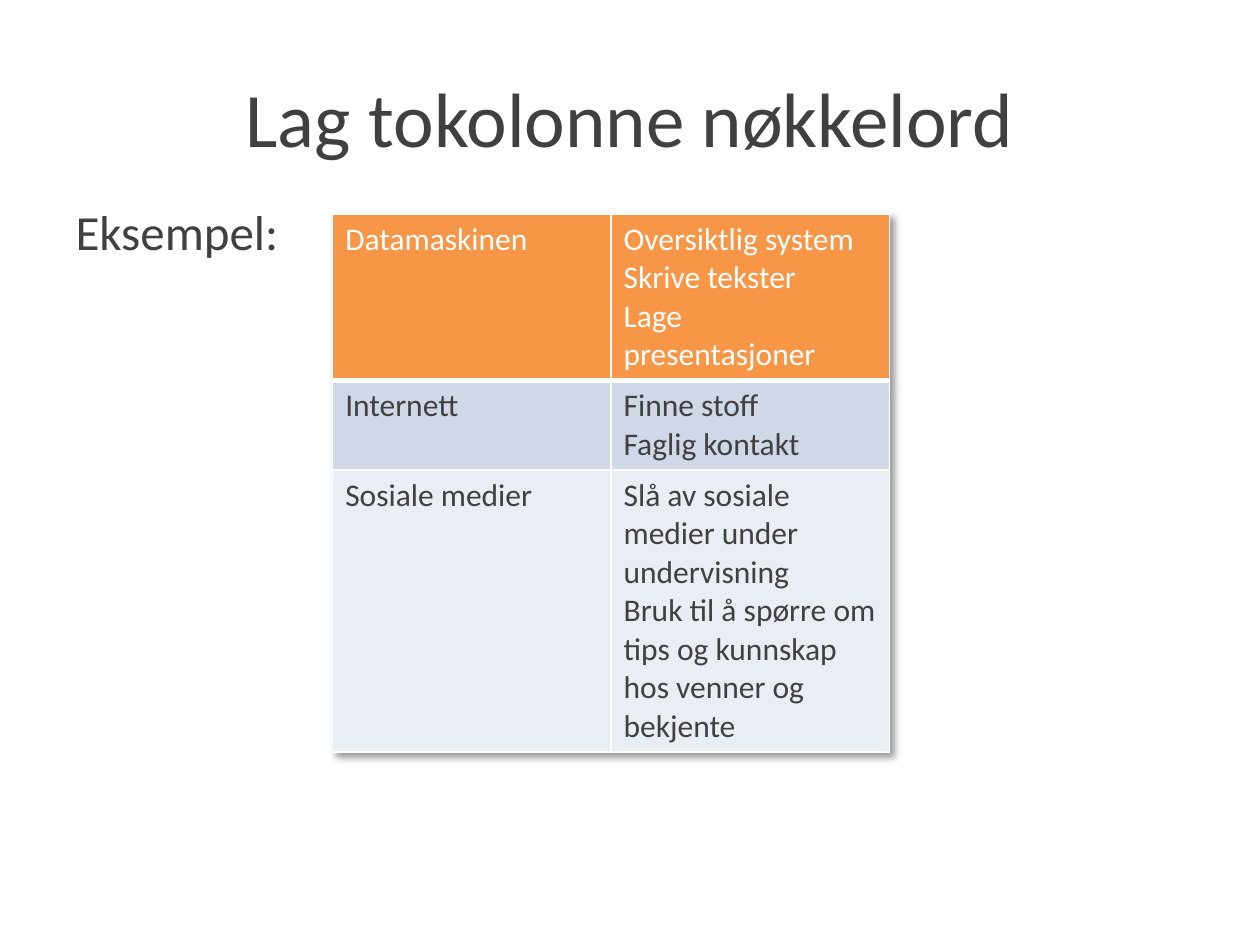
import pptx
import pptx.dml.color
import pptx.enum.text
import pptx.oxml
import pptx.oxml.ns
import pptx.util

Pt = pptx.util.Pt
NAMESPACE = pptx.oxml.ns.nsdecls("a")


def color(value):
    return pptx.dml.color.RGBColor.from_string(value)


def element(xml):
    """Parse one drawing element, given as XML with a {ns} mark."""
    return pptx.oxml.parse_xml(xml.replace("{ns}", NAMESPACE))


class SlideBuilder:
    FONT = "Calibri"
    TEXT = "404040"
    WHITE = "FFFFFF"

    def __init__(self, presentation):
        self.slide = presentation.slides.add_slide(presentation.slide_layouts[1])

    def style(self, paragraph, size, text_color):
        paragraph.font.name = self.FONT
        paragraph.font.size = Pt(size)
        paragraph.font.bold = False
        paragraph.font.color.rgb = color(text_color)

    def placeholder(self, index, text, box, size, anchor):
        shape = self.slide.placeholders[index]
        shape.left, shape.top, shape.width, shape.height = map(Pt, box)
        frame = shape.text_frame
        frame.text = text
        frame.word_wrap = True
        frame.auto_size = pptx.enum.text.MSO_AUTO_SIZE.NONE
        frame.vertical_anchor = anchor
        return frame.paragraphs[0], size

    def title(self, text, box, size):
        paragraph, size = self.placeholder(
            0, text, box, size, pptx.enum.text.MSO_ANCHOR.MIDDLE)
        paragraph.alignment = pptx.enum.text.PP_ALIGN.CENTER
        self.style(paragraph, size, self.TEXT)

    def body(self, text, box, size):
        paragraph, size = self.placeholder(
            1, text, box, size, pptx.enum.text.MSO_ANCHOR.TOP)
        properties = paragraph._p.get_or_add_pPr()
        properties.set("marL", "0")
        properties.set("indent", "0")
        properties.append(element("<a:buNone {ns}/>"))
        self.style(paragraph, size, self.TEXT)

    def cell(self, cell, text, fill, text_color, bottom_border):
        cell.text = text
        for paragraph in cell.text_frame.paragraphs:
            self.style(paragraph, 18, text_color)
        cell.fill.solid()
        cell.fill.fore_color.rgb = color(fill)
        # Borders come before the fill
        widths = {"lnL": 1, "lnR": 1, "lnT": 1, "lnB": bottom_border}
        for position, (side, width) in enumerate(widths.items()):
            cell._tc.get_or_add_tcPr().insert(position, element(
                f'<a:{side} {{ns}} w="{Pt(width)}"><a:solidFill>'
                f'<a:srgbClr val="{self.WHITE}"/></a:solidFill></a:{side}>'))

    def table(self, rows, left, top, column_width, row_height):
        columns = len(rows[0][0])
        table = self.slide.shapes.add_table(
            len(rows), columns, Pt(left), Pt(top),
            Pt(column_width * columns), Pt(row_height * len(rows))).table
        for row_index, (texts, fill, text_color, border) in enumerate(rows):
            for column_index, text in enumerate(texts):
                self.cell(table.cell(row_index, column_index),
                          text, fill, text_color, border)
        # Soft shadow to the lower right
        table._tbl.tblPr.insert(0, element(
            f'<a:effectLst {{ns}}><a:outerShdw blurRad="{Pt(4)}" dist="{Pt(3)}" '
            'dir="2700000" algn="tl" rotWithShape="0"><a:srgbClr val="000000">'
            '<a:alpha val="40000"/></a:srgbClr></a:outerShdw></a:effectLst>'))


def main():
    presentation = pptx.Presentation()
    presentation.slide_width = Pt(720)
    presentation.slide_height = Pt(540)
    builder = SlideBuilder(presentation)

    # Heading and lead-in
    builder.title("Lag tokolonne nøkkelord", (36, 21.6, 648, 90), 44)
    builder.body("Eksempel:", (36, 111.6, 318.2, 59), 28)

    # Keyword table: texts, fill, text colour, bottom border
    rows = [
        (("Datamaskinen",
          "Oversiktlig system\nSkrive tekster\nLage presentasjoner"),
         "F79646", builder.WHITE, 3),
        (("Internett", "Finne stoff\nFaglig kontakt"),
         "D0D8E8", builder.TEXT, 1),
        (("Sosiale medier",
          "Slå av sosiale medier under undervisning\n"
          "Bruk til å spørre om tips og kunnskap hos venner og bekjente"),
         "E9EDF4", builder.TEXT, 1),
    ]
    builder.table(rows, left=190.1, top=122.4, column_width=159.1, row_height=29.2)

    presentation.save("out.pptx")


if __name__ == "__main__":
    main()
